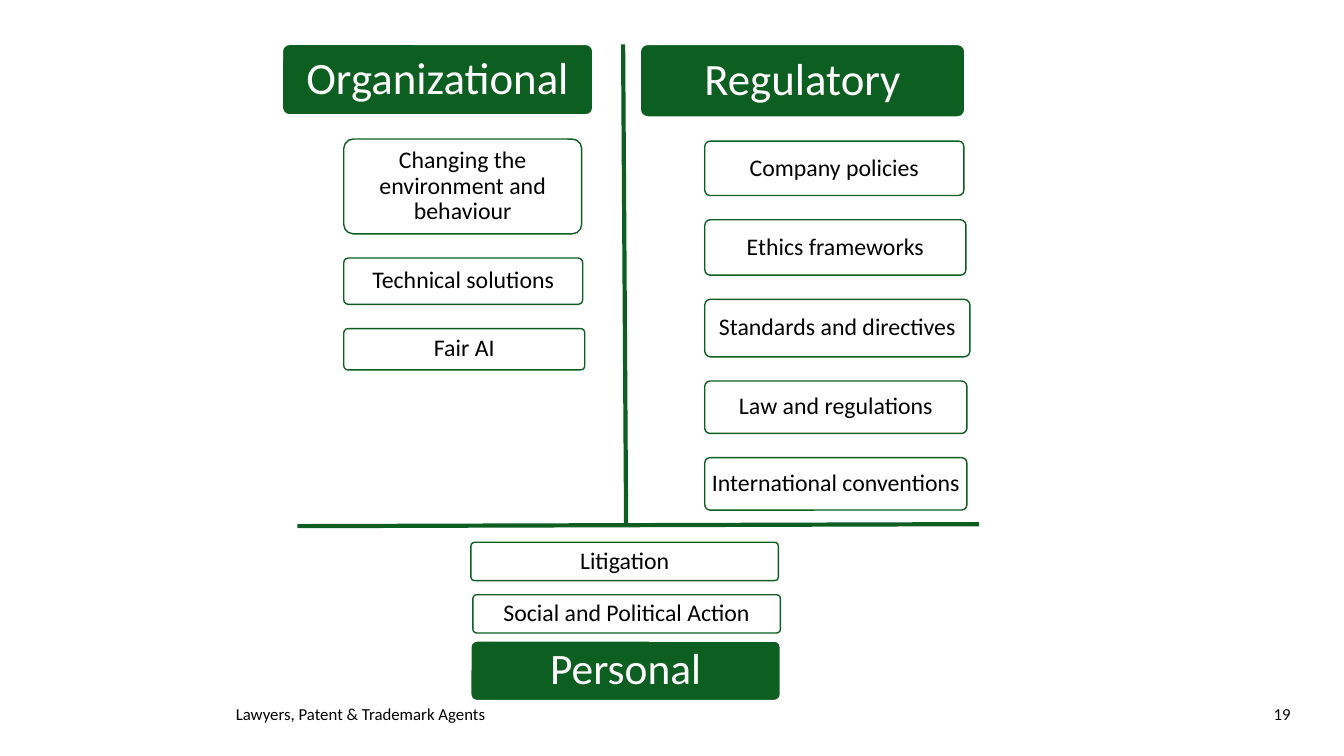
"""Build a slide of organizational, regulatory and personal measures."""
from lxml import etree
from pptx import Presentation
from pptx.dml.color import RGBColor
from pptx.enum.shapes import MSO_CONNECTOR, MSO_SHAPE
from pptx.enum.text import MSO_ANCHOR, PP_ALIGN
from pptx.oxml.ns import qn
from pptx.util import Inches, Pt

STRAIGHT = MSO_CONNECTOR.STRAIGHT
ROUNDED = MSO_SHAPE.ROUNDED_RECTANGLE
MIDDLE, TOP = MSO_ANCHOR.MIDDLE, MSO_ANCHOR.TOP
CENTER, LEFT, RIGHT = PP_ALIGN.CENTER, PP_ALIGN.LEFT, PP_ALIGN.RIGHT
COLORS = {"green": "0C5F20", "white": "FFFFFF", "black": "000000"}
FONT = "Calibri"
BLANK_LAYOUT = 6
ITEM_GAP = 0.24

HEADINGS = [
    ("Organizational", (2.8, 0.44, 3.08, 0.7), 32),
    ("Regulatory", (6.35, 0.44, 3.22, 0.72), 32),
    ("Personal", (4.67, 6.36, 3.07, 0.59), 31),
]
ORGANIZATIONAL = [
    ("Changing the environment and behaviour", 2.36, 0.94),
    ("Technical solutions", 2.37, 0.46),
    ("Fair AI", 2.39, 0.41),
]
REGULATORY = [
    ("Company policies", 2.57, 0.54),
    ("Ethics frameworks", 2.59, 0.55),
    ("Standards and directives", 2.63, 0.57),
    ("Law and regulations", 2.6, 0.52),
    ("International conventions", 2.6, 0.52),
]
PERSONAL = [
    ("Litigation", (4.67, 5.38, 3.05, 0.38)),
    ("Social and Political Action", (4.69, 5.9, 3.05, 0.38)),
]


def color(name):
    """Return the named colour."""
    return RGBColor.from_string(COLORS[name])


def write_text(box, text, size=17, ink="black", align=CENTER, anchor=MIDDLE,
               insets=(0.05, 0.03), spacing=0.9):
    """Write one formatted paragraph into a shape."""
    frame = box.text_frame
    frame.word_wrap = True
    frame.vertical_anchor = anchor
    frame.margin_left = frame.margin_right = Inches(insets[0])
    frame.margin_top = frame.margin_bottom = Inches(insets[1])
    para = frame.paragraphs[0]
    para.alignment = align
    para.line_spacing = spacing
    span = para.add_run()
    span.text = text
    span.font.name = FONT
    span.font.size = Pt(size)
    span.font.color.rgb = color(ink)


def add_box(page, place, fill, line):
    """Add a rounded box without shadow."""
    box = page.shapes.add_shape(ROUNDED, *map(Inches, place))
    box.adjustments[0] = 0.1
    box.shadow.inherit = False
    box.fill.solid()
    box.fill.fore_color.rgb = color(fill)
    box.line.color.rgb = color(line)
    box.line.width = Pt(1)
    return box


def add_heading(page, text, place, size):
    """Add a solid green heading."""
    box = add_box(page, place, "green", "white")
    write_text(box, text, size=size, ink="white", insets=(0.09, 0.06))


def add_item(page, text, place):
    """Add an outlined item with a slightly transparent fill."""
    box = add_box(page, place, "white", "green")
    tint = box._element.spPr.find(qn("a:solidFill")).find(qn("a:srgbClr"))
    etree.SubElement(tint, qn("a:alpha")).set("val", "90000")
    write_text(box, text)


def add_column(page, items, left, top):
    """Stack items downwards with equal gaps."""
    for text, width, height in items:
        add_item(page, text, (left, top, width, height))
        top += height + ITEM_GAP


def add_divider(page, *ends):
    """Add a thick green line between two points."""
    line = page.shapes.add_connector(STRAIGHT, *map(Inches, ends))
    line.line.color.rgb = color("green")
    line.line.width = Pt(3)
    etree.SubElement(line._element.spPr, qn("a:effectLst"))


def add_footer(page, text, left, align):
    """Add a small text at the foot of the slide."""
    box = page.shapes.add_textbox(*map(Inches, (left, 6.93, 3.36, 0.3)))
    write_text(box, text, size=12, align=align, anchor=TOP,
               insets=(0.1, 0.05), spacing=1.0)


def main():
    """Build and save the slide."""
    deck = Presentation()
    deck.slide_width, deck.slide_height = Inches(13.33), Inches(7.5)
    page = deck.slides.add_slide(deck.slide_layouts[BLANK_LAYOUT])
    add_footer(page, "Lawyers, Patent & Trademark Agents", 2.24, LEFT)
    add_footer(page, "19", 9.54, RIGHT)
    add_column(page, ORGANIZATIONAL, 3.41, 1.38)
    add_column(page, REGULATORY, 6.99, 1.4)
    add_divider(page, 6.18, 0.44, 6.21, 5.2)
    add_divider(page, 9.71, 5.2, 2.95, 5.22)
    for text, place in PERSONAL:
        add_item(page, text, place)
    for text, place, size in HEADINGS:
        add_heading(page, text, place, size)
    deck.save("out.pptx")


if __name__ == "__main__":
    main()
